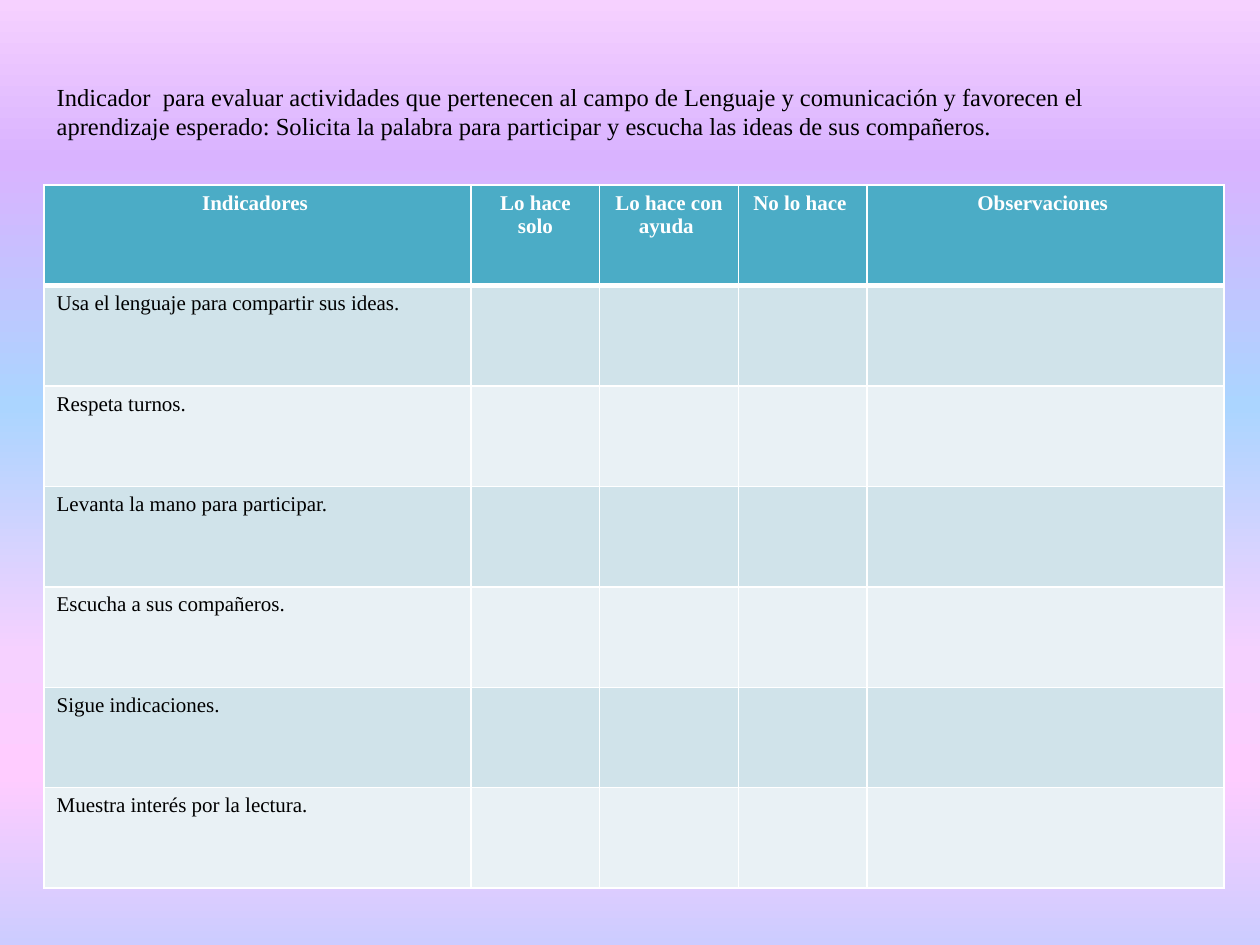
"""Build a classroom checklist slide on asking for the floor and listening."""
from lxml import etree
from pptx import Presentation
from pptx.dml.color import RGBColor
from pptx.enum import text as t
from pptx.oxml import ns
from pptx.util import Pt

HEADING = (
    "Indicador  para evaluar actividades que pertenecen al campo de Lenguaje y "
    "comunicación y favorecen el aprendizaje esperado: Solicita la palabra para "
    "participar y escucha las ideas de sus compañeros."
)
COLUMNS = [
    ("Indicadores ", 244.08),
    ("Lo hace solo", 73.44),
    ("Lo hace con ayuda ", 79.2),
    ("No lo hace ", 73.44),
    ("Observaciones ", 204.1),
]
INDICATORS = [
    "Usa el lenguaje para compartir sus ideas.",
    "Respeta turnos.",
    "Levanta la mano para participar.",
    "Escucha a sus compañeros.",
    "Sigue indicaciones.",
    "Muestra interés por la lectura.",
]
THEME = {
    "font": "Times New Roman",
    "heading_size": 14,
    "table_size": 12,
    "ink": "000000",
    "header_ink": "FFFFFF",
    "header": "4BACC6",
    "bands": ["D0E3EA", "E9F1F5"],
    "grid": "FFFFFF",
    "grid_width": 1,
    "header_rule": 3,
    "backdrop": [(0, "F6D1FF"), (17, "D9B3FF"), (43, "ABD5FF"),
                 (69, "F6D1FF"), (82, "FFCCFF"), (100, "CCCCFF")],
}
LEFT, HEADING_TOP, TABLE_TOP = 25.2, 43.2, 105.84
HEADING_WIDTH, HEADING_HEIGHT, ROW_HEIGHT = 663.1, 63.36, 57.38


def add_color(parent, value):
    etree.SubElement(parent, ns.qn("a:srgbClr"), val=value)


def paint_backdrop(slide):
    fill = slide.background.fill
    fill.gradient()
    fill.gradient_angle = 270
    stops = slide.element.find(".//" + ns.qn("a:gsLst"))
    for old in list(stops):
        stops.remove(old)
    for percent, value in THEME["backdrop"]:
        add_color(etree.SubElement(stops, ns.qn("a:gs"), pos=str(percent * 1000)), value)


def write(paragraph, wording, size, ink, bold=False):
    run = paragraph.add_run()
    run.text = wording
    run.font.name = THEME["font"]
    run.font.size = Pt(size)
    run.font.bold = bold
    run.font.color.rgb = RGBColor.from_string(ink)


def draw_borders(cell, top, bottom):
    properties = cell._tc.get_or_add_tcPr()
    side = THEME["grid_width"]
    edges = [("L", side), ("R", side), ("T", top), ("B", bottom)]
    for position, (edge, width) in enumerate(edges):
        line = etree.Element(ns.qn("a:ln" + edge), w=str(int(Pt(width))))
        add_color(etree.SubElement(line, ns.qn("a:solidFill")), THEME["grid"])
        properties.insert(position, line)


def add_heading(slide):
    heading = slide.shapes.title
    heading.left, heading.top = Pt(LEFT), Pt(HEADING_TOP)
    heading.width, heading.height = Pt(HEADING_WIDTH), Pt(HEADING_HEIGHT)
    frame = heading.text_frame
    frame.word_wrap = True
    frame.auto_size = t.MSO_AUTO_SIZE.NONE
    frame.vertical_anchor = t.MSO_ANCHOR.TOP
    frame.paragraphs[0].alignment = t.PP_ALIGN.LEFT
    write(frame.paragraphs[0], HEADING, THEME["heading_size"], THEME["ink"])


def add_checklist(slide):
    titles, widths = zip(*COLUMNS)
    rows = [titles] + [(indicator,) + ("",) * (len(titles) - 1) for indicator in INDICATORS]
    checklist = slide.shapes.add_table(
        len(rows), len(titles), Pt(LEFT), Pt(TABLE_TOP),
        Pt(sum(widths)), Pt(ROW_HEIGHT * len(rows))).table
    for column, width in zip(checklist.columns, widths):
        column.width = Pt(width)
    for index, wordings in enumerate(rows):
        checklist.rows[index].height = Pt(ROW_HEIGHT)
        is_header = index == 0
        band = THEME["header"] if is_header else THEME["bands"][(index - 1) % 2]
        ink = THEME["header_ink"] if is_header else THEME["ink"]
        top = THEME["header_rule"] if index == 1 else THEME["grid_width"]
        bottom = THEME["header_rule"] if is_header else THEME["grid_width"]
        for cell, wording in zip(checklist.rows[index].cells, wordings):
            cell.fill.solid()
            cell.fill.fore_color.rgb = RGBColor.from_string(band)
            draw_borders(cell, top, bottom)
            paragraph = cell.text_frame.paragraphs[0]
            if is_header:
                paragraph.alignment = t.PP_ALIGN.CENTER
            if wording:
                write(paragraph, wording, THEME["table_size"], ink, is_header)


def main():
    deck = Presentation()
    deck.slide_width, deck.slide_height = Pt(720), Pt(540)
    slide = deck.slides.add_slide(deck.slide_layouts.get_by_name("Title Only"))
    paint_backdrop(slide)
    add_heading(slide)
    add_checklist(slide)
    deck.save("out.pptx")


if __name__ == "__main__":
    main()
